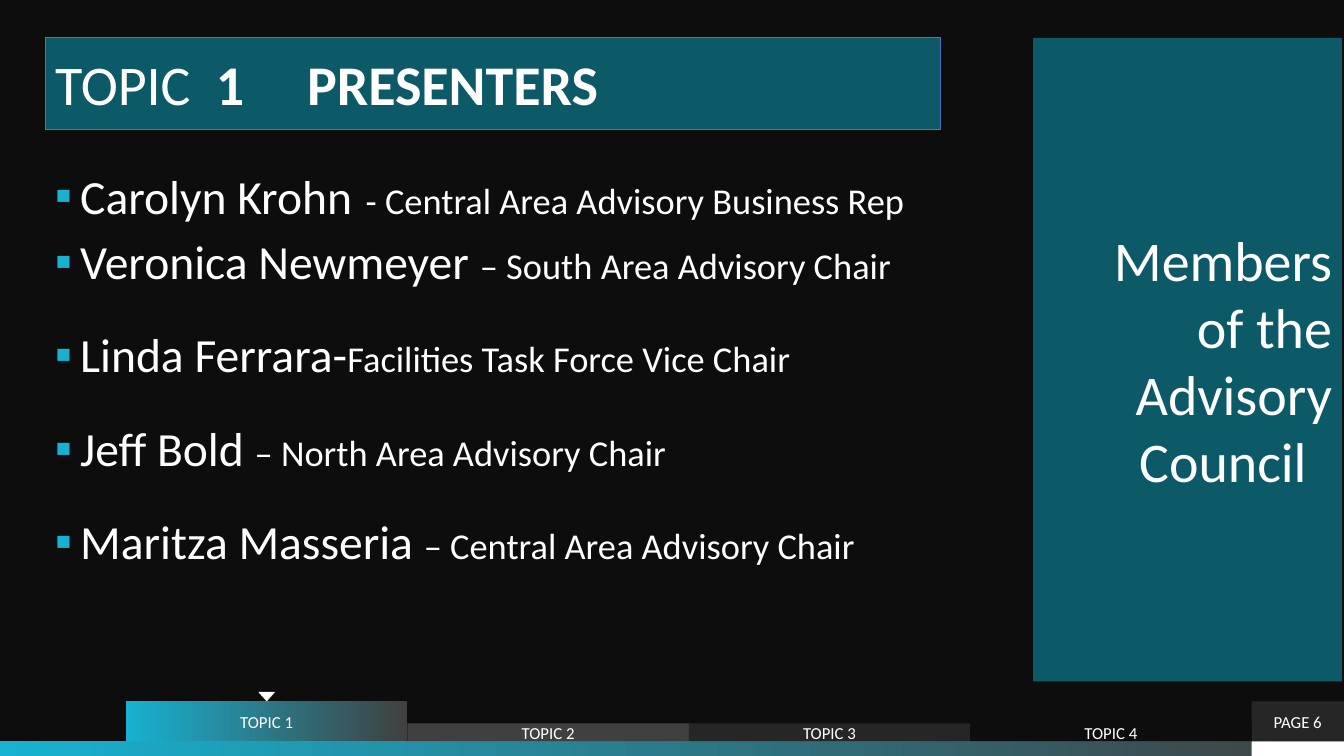
"""Build the Topic 1 presenters slide with its topic tabs."""
from dataclasses import dataclass
from typing import Any, Optional

from lxml import etree
from pptx import Presentation
from pptx.dml.color import RGBColor
from pptx.enum import shapes, text
from pptx.oxml import ns
from pptx.util import Emu, Pt

PX = 9525
FONT = "Calibri"
BLACK = RGBColor(0x0D, 0x0D, 0x0D)
DARK = RGBColor(0x26, 0x26, 0x26)
GREY = RGBColor(0x40, 0x40, 0x40)
TEAL = RGBColor(0x0C, 0x59, 0x68)
CYAN = RGBColor(0x17, 0xB2, 0xD1)
BLUE = RGBColor(0x53, 0x70, 0xC5)
WHITE = RGBColor(0xFF, 0xFF, 0xFF)
LEFT, MID, RIGHT = text.PP_ALIGN.LEFT, text.PP_ALIGN.CENTER, text.PP_ALIGN.RIGHT
RECT = shapes.MSO_SHAPE.RECTANGLE
PAD = {"margin_top": 12, "margin_bottom": 12}


@dataclass(frozen=True)
class Run:
    """A piece of text in one format."""
    words: str
    size: int
    bold: bool = False


@dataclass(frozen=True)
class Box:
    """A filled shape; no fill means a gradient from cyan to grey."""
    left: int
    top: int
    width: int
    height: int
    fill: Optional[RGBColor] = None
    form: Any = RECT
    turn: int = 0


@dataclass(frozen=True)
class Person:
    """A presenter, the role and the space before in points."""
    name: str
    role: str
    gap: int


STEP = 268
TABS = [Box(120 + STEP * i, top, STEP, 706 - top, fill) for i, (top, fill) in
        enumerate([(668, None), (689, GREY), (689, DARK), (689, BLACK)])]
TITLE = Box(43, 36, 853, 87, TEAL)
SIDE = Box(984, 36, 294, 613, TEAL)
PAGE = Box(1192, 668, 88, 38, DARK)
PLAIN = [Box(0, 706, 1280, 14), Box(1192, 706, 88, 14, WHITE),
         Box(246, 659, 16, 9, WHITE, shapes.MSO_SHAPE.ISOSCELES_TRIANGLE, 180)]
PEOPLE = [
    Person("Carolyn Krohn", "\t - Central Area Advisory Business Rep", 0),
    Person("Veronica Newmeyer ", "– South Area Advisory Chair", 10),
    Person("Linda Ferrara-", "Facilities Task Force Vice Chair", 30),
    Person("Jeff Bold ", "– North Area Advisory Chair", 30),
    Person("Maritza Masseria ", "– Central Area Advisory Chair", 30),
]


def put(item: Any, vals: dict[str, Any]) -> None:
    """Set each named value on the item."""
    for key, val in vals.items():
        setattr(item, key, val)


def px(size: int) -> Emu:
    """Turn pixels into EMU."""
    return Emu(size * PX)


def draw(slide: Any, box: Box) -> Any:
    """Draw a box without line or shadow."""
    shape = slide.shapes.add_shape(
        box.form, px(box.left), px(box.top), px(box.width), px(box.height))
    put(shape, {"rotation": box.turn})
    shape.shadow.inherit = False
    shape.line.fill.background()
    if box.fill is None:
        shape.fill.gradient()
        shape.fill.gradient_angle = 0
        for stop, tone in zip(shape.fill.gradient_stops, (CYAN, GREY)):
            stop.color.rgb = tone
    else:
        shape.fill.solid()
        shape.fill.fore_color.rgb = box.fill
    return shape


def write(shape: Any, paras: list[list[Run]], align: Any,
          pads: Optional[dict[str, int]] = None,
          anchor: Any = text.MSO_ANCHOR.MIDDLE) -> None:
    """Write paragraphs of runs into a shape."""
    frame = shape.text_frame
    put(frame, {"word_wrap": True, "vertical_anchor": anchor})
    put(frame, {key: px(val) for key, val in (pads or {}).items()})
    for i, runs in enumerate(paras):
        para = frame.add_paragraph() if i else frame.paragraphs[0]
        para.alignment = align
        for part in runs:
            run = para.add_run()
            run.text = part.words
            put(run.font, {"name": FONT, "size": Pt(part.size), "bold": part.bold})
            run.font.color.rgb = WHITE


def mark(para: Any) -> None:
    """Give a paragraph a cyan square bullet and hanging indent."""
    props = para._p.get_or_add_pPr()
    props.set("marL", str(px(24)))
    props.set("indent", str(px(-24)))
    tone = etree.SubElement(props, ns.qn("a:buClr"))
    etree.SubElement(tone, ns.qn("a:srgbClr")).set("val", str(CYAN))
    etree.SubElement(props, ns.qn("a:buFont")).set("typeface", FONT)
    etree.SubElement(props, ns.qn("a:buChar")).set("char", "▪")


def roster(slide: Any) -> None:
    """Write the list of presenters."""
    area = slide.shapes.add_textbox(px(43), px(160), px(899), px(488))
    write(area, [[Run(p.name, 34), Run(p.role, 26)] for p in PEOPLE], LEFT,
          anchor=text.MSO_ANCHOR.TOP)
    for para, who in zip(area.text_frame.paragraphs, PEOPLE):
        mark(para)
        put(para, {"line_spacing": 0.9, "space_before": Pt(who.gap)})


def main() -> None:
    """Build and save the slide."""
    deck = Presentation()
    put(deck, {"slide_width": px(1280), "slide_height": px(720)})
    slide = deck.slides.add_slide(deck.slide_layouts[6])
    slide.background.fill.solid()
    slide.background.fill.fore_color.rgb = BLACK
    for box in PLAIN:
        draw(slide, box)
    title = draw(slide, TITLE)
    title.line.color.rgb = BLUE
    title.line.width = Pt(0.75)
    write(title, [[Run("TOPIC ", 40), Run(" 1\t\tPRESENTERS", 40, True)]], LEFT, PAD)
    roster(slide)
    write(draw(slide, PAGE), [[Run("PAGE 6", 12)]], MID)
    for i, tab in enumerate(TABS, 1):
        write(draw(slide, tab), [[Run(f"TOPIC {i}", 12)]], MID)
    lines = ("Members", "of the", "Advisory Council  ")
    write(draw(slide, SIDE), [[Run(line, 40)] for line in lines], RIGHT, PAD)
    deck.save("out.pptx")


if __name__ == "__main__":
    main()
